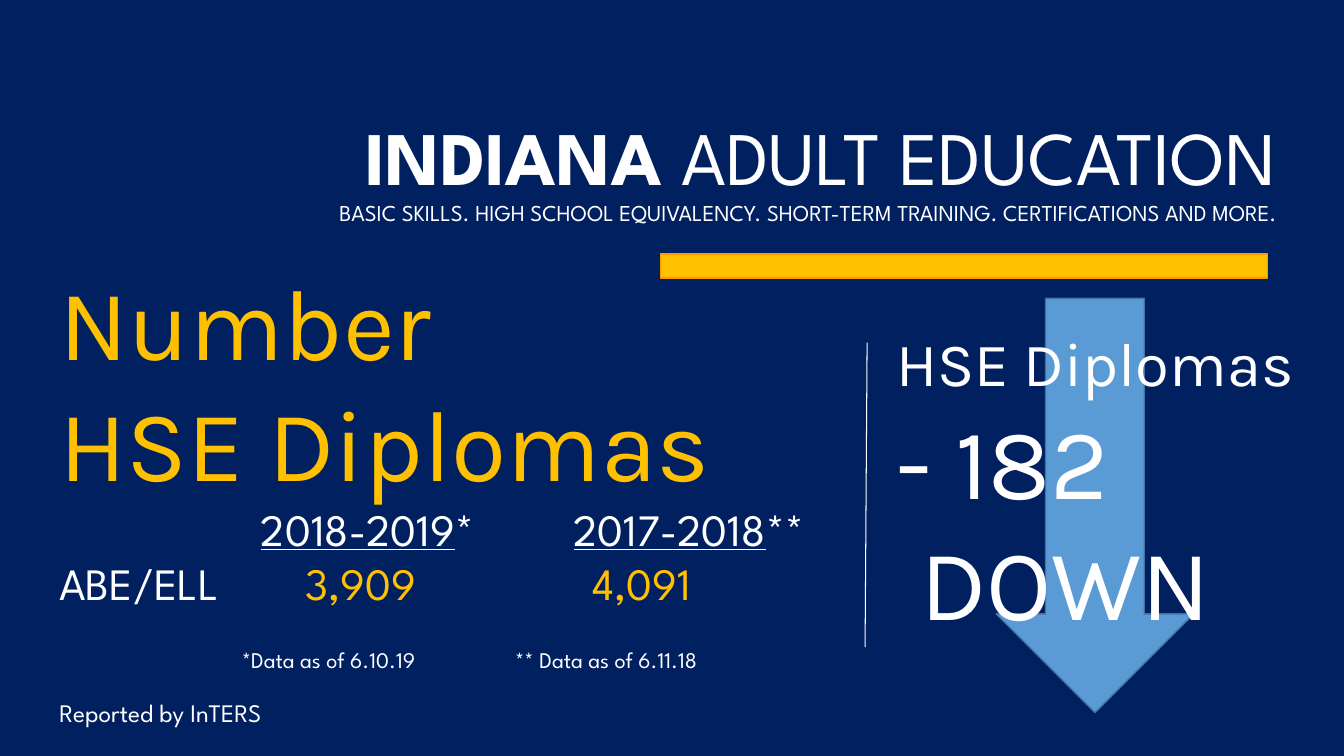
from lxml.etree import SubElement
from pptx import Presentation
from pptx.dml.color import RGBColor as RGB
from pptx.enum.shapes import MSO_CONNECTOR as CONN, MSO_SHAPE as SHAPE
from pptx.enum.text import MSO_ANCHOR as ANCHOR, PP_ALIGN as ALIGN
from pptx.oxml.ns import qn
from pptx.util import Pt

PX = 9144
COLORS = {
    "navy": "002060", "white": "FFFFFF", "gold": "FFC000",
    "orange": "FF9900", "blue": "5B9BD5", "steel": "43739E",
}
C = {name: RGB.from_string(value) for name, value in COLORS.items()}
SPARTAN, KARLA = "League Spartan", "Karla"


def px(*lengths):
    return [n * PX for n in lengths]


def add_runs(p, runs, color, **base):
    for text, extra in runs:
        fmt = {"color": color, **base, **extra}
        r = p.add_run()
        r.text = text
        r.font.color.rgb = C[fmt.pop("color")]
        for name, value in fmt.items():
            setattr(r.font, name, value)


prs = Presentation()
prs.slide_width, prs.slide_height = px(1333, 750)
s = prs.slides.add_slide(prs.slide_layouts[5])
s.background.fill.solid()
s.background.fill.fore_color.rgb = C["navy"]

title = s.shapes.title
title.left, title.top, title.width, title.height = px(177, 111, 1099, 141)
tf = title.text_frame
for name, value in {"word_wrap": True, "vertical_anchor": ANCHOR.MIDDLE,
                    "margin_bottom": 24 * PX}.items():
    setattr(tf, name, value)
p = tf.paragraphs[0]
p.alignment, p.line_spacing = ALIGN.RIGHT, 0.9
add_runs(p, [("INDIANA", {"bold": True}), (" ADULT EDUCATION", {})],
         "white", name=SPARTAN, size=Pt(54), bold=False)
p.add_line_break()
tagline = ("BASIC SKILLS. HIGH SCHOOL EQUIVALENCY. SHORT-TERM TRAINING. "
           "CERTIFICATIONS AND MORE.")
add_runs(p, [(tagline, {})], "white", name=SPARTAN, size=Pt(16.2), bold=False)

for kind, box, fill, line in [
    (SHAPE.RECTANGLE, (655, 252, 602, 24), "gold", "orange"),
    (SHAPE.DOWN_ARROW, (988, 296, 196, 411), "blue", "steel"),
]:
    sp = s.shapes.add_shape(kind, *px(*box))
    sp.shadow.inherit = False
    sp.fill.solid()
    sp.fill.fore_color.rgb = C[fill]
    sp.line.color.rgb = C[line]
    sp.line.width = Pt(1)

divider = s.shapes.add_connector(CONN.STRAIGHT, *px(860, 340, 858, 642))
divider.line.color.rgb = C["white"]
divider.line.width = Pt(0.75)
SubElement(divider._element.spPr, qn("a:effectLst"))

under = {"underline": True}
gold = {"color": "gold"}
heading = {"name": KARLA, "size": Pt(72)}
gold_heading = {**heading, **gold}
figures = {"size": Pt(32)}
texts = [
    ((49, 636, 754, 37), [
        ([("\t*Data as of 6.10.19\t** Data as of 6.11.18", {})],
         {"size": Pt(16)}, (181, 452)),
    ]),
    ((49, 253, 1057, 427), [
        ([("Number", {})], gold_heading, ()),
        ([("HSE Diplomas", {})], gold_heading, ()),
        ([("\t", {}), ("2018-2019", under), ("*\t", {}),
          ("2017-2018", under), ("**", {})], figures, (200, 510)),
        ([("ABE/ELL", {}), ("\t3,909\t4,091", gold)], figures, (244, 529)),
    ]),
    ((879, 317, 454, 326), [
        ([("HSE Diplomas", {})], {"name": KARLA, "size": Pt(44)}, ()),
        ([("- 182", {})], heading, ()),
        ([(" DOWN", {})], heading, ()),
    ]),
    ((49, 687, 568, 40), [
        ([("Reported by InTERS", {})], {"size": Pt(18)}, ()),
    ]),
]
for box, paragraphs in texts:
    tf = s.shapes.add_textbox(*px(*box)).text_frame
    tf.word_wrap = True
    for i, (runs, style, stops) in enumerate(paragraphs):
        p = tf.add_paragraph() if i else tf.paragraphs[0]
        add_runs(p, runs, **{"color": "white", "name": SPARTAN, **style})
        if stops:
            tabs = SubElement(p._p.get_or_add_pPr(), qn("a:tabLst"))
            for stop in px(*stops):
                SubElement(tabs, qn("a:tab"), pos=str(stop), algn="l")

prs.save("out.pptx")
